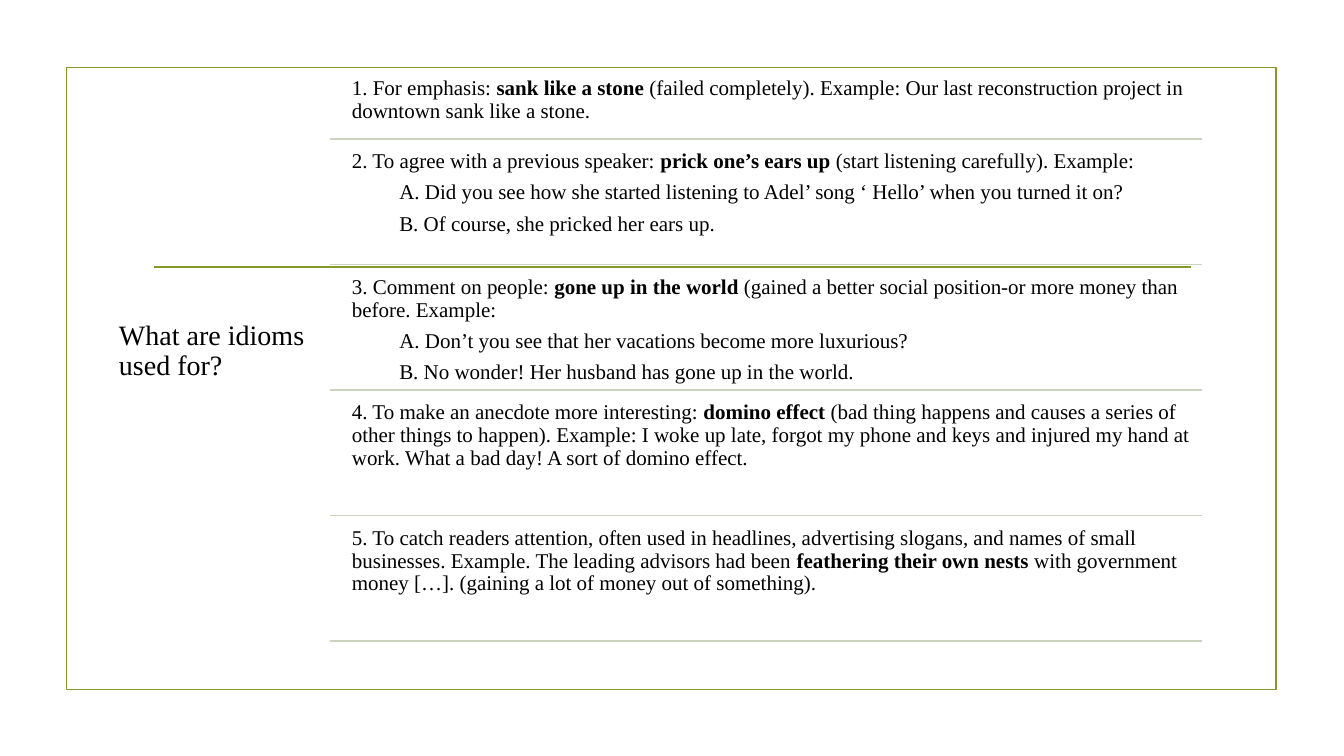
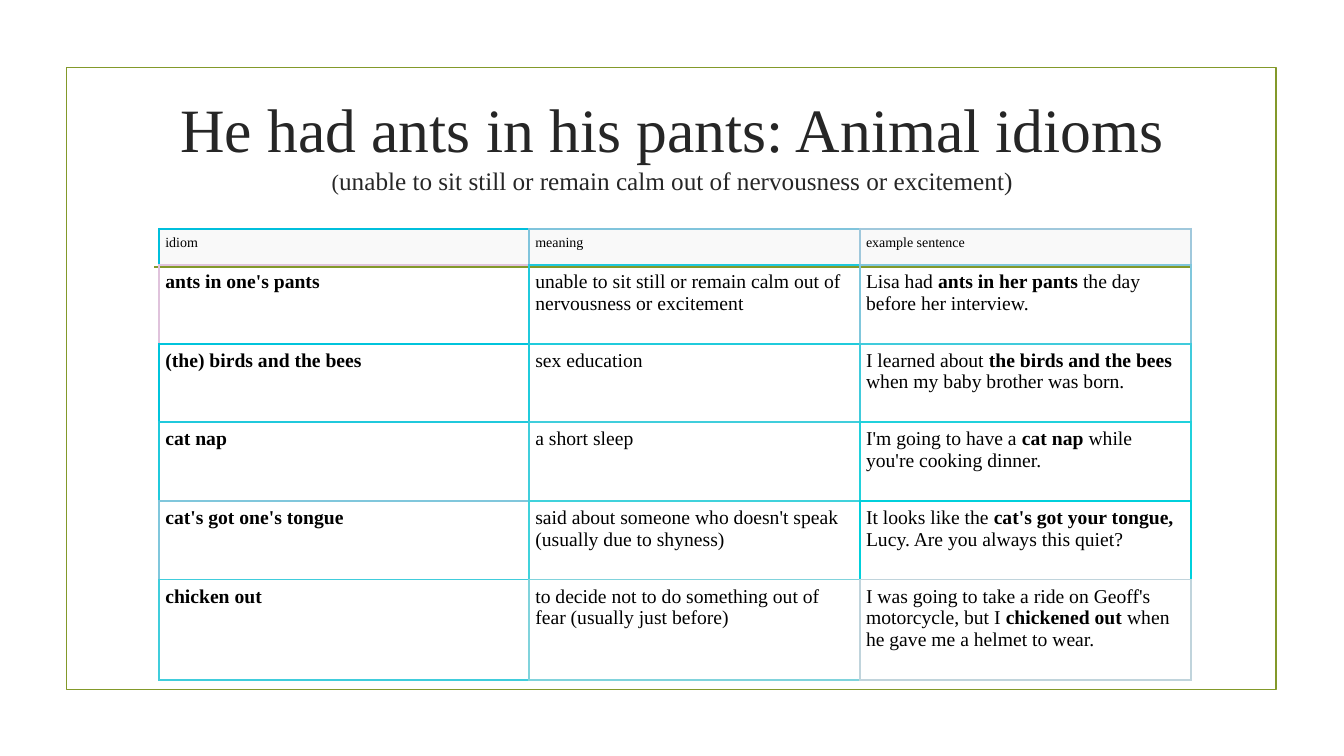
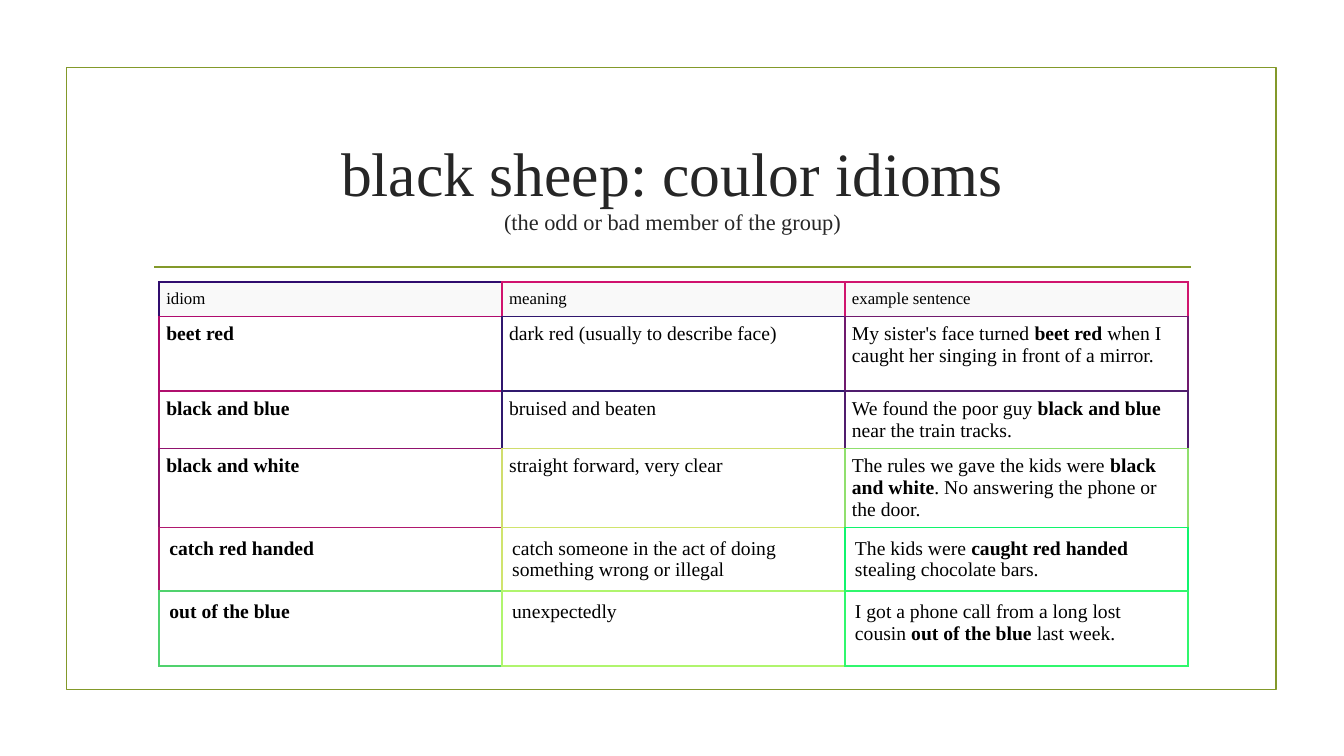
from lxml import etree
from pptx import Presentation
from pptx.dml import color
from pptx.enum import shapes, text
from pptx.oxml import ns
from pptx.util import Inches, Pt

GREEN, PALE, BLACK, DARK, HEAD = "83992A", "CDD4BE", "000000", "262626", "F9F9F9"
FONT = "Times New Roman"


def rgb(code):
    return color.RGBColor.from_string(code)


class Deck:
    """Holds the shared style and the current slide."""

    def __init__(self):
        self.prs = Presentation()
        self.prs.slide_width, self.prs.slide_height = Inches(13.33), Inches(7.5)

    def start(self, layout):
        self.slide = self.prs.slides.add_slide(self.prs.slide_layouts[layout])
        frame = self.slide.shapes.add_shape(
            shapes.MSO_SHAPE.RECTANGLE, Inches(0.66), Inches(0.67), Inches(12), Inches(6.17))
        frame.shadow.inherit = False
        frame.fill.background()
        frame.line.color.rgb = rgb(GREEN)
        frame.line.width = Pt(1.25)
        self.rule(1.53, 11.81, 2.65, GREEN)

    def rule(self, left, right, y, tint):
        line = self.slide.shapes.add_connector(
            shapes.MSO_CONNECTOR.STRAIGHT, Inches(left), Inches(y), Inches(right), Inches(y))
        line.line.color.rgb = rgb(tint)
        line.line.width = Pt(1.25)
        etree.SubElement(line._element.spPr, ns.qn("a:effectLst"))

    def run(self, para, words, size, tint=BLACK, bold=False):
        run = para.add_run()
        run.text = words
        font = run.font
        font.name, font.size, font.bold = FONT, Pt(size), bold
        font.color.rgb = rgb(tint)

    def say(self, para, words, size):
        """Adds the words, with those between stars in bold."""
        for i, part in enumerate(words.split("*")):
            if part:
                self.run(para, part, size, bold=i % 2 == 1)

    def inset(self, box, gap):
        box.margin_left = box.margin_right = Inches(gap)
        box.margin_top = box.margin_bottom = Inches(gap)

    def note(self, left, top, width, height, lines, size, gap):
        box = self.slide.shapes.add_textbox(
            Inches(left), Inches(top), Inches(width), Inches(height)).text_frame
        box.word_wrap = True
        self.inset(box, gap)
        for i, words in enumerate(lines):
            para = box.add_paragraph() if i else box.paragraphs[0]
            para.line_spacing = 0.9
            para.space_after = Pt(6)
            if i:
                para._p.get_or_add_pPr().set("marL", str(Inches(0.47)))
            self.say(para, words, size)

    def title(self, top, height, main, parts):
        shape = self.slide.shapes.title
        shape.left, shape.top = Inches(1.42), Inches(top)
        shape.width, shape.height = Inches(10.5), Inches(height)
        box = shape.text_frame
        box.word_wrap = True
        box.auto_size = text.MSO_AUTO_SIZE.NONE
        box.vertical_anchor = text.MSO_ANCHOR.MIDDLE
        box.margin_top, box.margin_bottom = Inches(0.1), 0
        para = box.paragraphs[0]
        para.alignment = text.PP_ALIGN.CENTER
        self.run(para, main, 44, DARK)
        para.add_line_break()
        for words, size in parts:
            self.run(para, words, size, DARK)

    def edge(self, cell, side, tint):
        line = etree.SubElement(cell._tc.get_or_add_tcPr(), ns.qn("a:ln" + side), w=str(Pt(1.5)))
        fill = etree.SubElement(line, ns.qn("a:solidFill"))
        etree.SubElement(fill, ns.qn("a:srgbClr"), val=tint)

    def table(self, top, cols, highs, rows, tints, gaps, small):
        """Draws a grid; each cell's tint marks its left and top edges."""
        grid = self.slide.shapes.add_table(
            len(rows), len(cols), Inches(1.58), Inches(top),
            Inches(sum(cols)), Inches(sum(highs))).table
        grid.first_row = grid.horz_banding = False
        for col, width in zip(grid.columns, cols):
            col.width = Inches(width)
        for r, row in enumerate(rows):
            grid.rows[r].height = Inches(highs[r])
            for c, words in enumerate(row):
                cell = grid.cell(r, c)
                self.inset(cell, gaps[r])
                own = tints[r][c]
                right = tints[r][min(c + 1, len(cols) - 1)]
                below = tints[min(r + 1, len(rows) - 1)][c]
                for side, tint in zip("LRTB", (own, right, own, below)):
                    self.edge(cell, side, tint)
                if r:
                    cell.fill.background()
                else:
                    cell.fill.solid()
                    cell.fill.fore_color.rgb = rgb(HEAD)
                self.say(cell.text_frame.paragraphs[0], words, 14 if r else small)


USES = [
    ["1. For emphasis: *sank like a stone *(failed completely). Example: Our last "
     "reconstruction project in downtown sank like a stone."],
    ["2. To agree with a previous speaker: *prick one’s ears up *(start listening carefully). Example:",
     "A. Did you see how she started listening to Adel’ song ‘ Hello’ when you turned it on?",
     "B. Of course, she pricked her ears up."],
    ["3. Comment on people: *gone up in the world *(gained a better social position-or more "
     "money than before. Example:",
     "A. Don’t you see that her vacations become more luxurious?",
     "B. No wonder! Her husband has gone up in the world."],
    ["4. To make an anecdote more interesting: *domino effect *(bad thing happens and causes a "
     "series of other things to happen). Example: I woke up late, forgot my phone and keys and "
     "injured my hand at work. What a bad day! A sort of domino effect."],
    ["5. To catch readers attention, often used in headlines, advertising slogans, and names of "
     "small businesses. Example. The leading advisors had been *feathering their own nests *with "
     "government money […]. (gaining a lot of money out of something)."],
]
TOP = ["idiom", "meaning", "example sentence"]
PETS = [
    TOP,
    ["*ants in one's pants*", "unable to sit still or remain calm out of nervousness or excitement",
     "Lisa had *ants in her pants* the day before her interview."],
    ["*(the) birds and the bees*", "sex education",
     "I learned about *the birds and the bees* when my baby brother was born."],
    ["*cat nap*", "a short sleep",
     "I'm going to have a *cat nap* while you're cooking dinner."],
    ["*cat's got one's tongue*", "said about someone who doesn't speak (usually due to shyness)",
     "It looks like the *cat's got your tongue,* Lucy. Are you always this quiet?"],
    ["*chicken out*", "to decide not to do something out of fear (usually just before)",
     "I was going to take a ride on Geoff's motorcycle, but I *chickened out* when he gave me "
     "a helmet to wear."],
]
PET_TINTS = [
    ["00BFDC", "80C4DC", "A0C8DC"],
    ["E0C3DC", "20C9DC", "80C7DC"],
    ["00C4DC", "20CBDC", "40CBDC"],
    ["20C9DC", "40CEDC", "20D1DC"],
    ["80C7DC", "40D2DC", "00D0DC"],
    ["40CDDC", "80D3DC", "C0D4DC"],
]
HUES = [
    TOP,
    ["*beet red*", "dark red (usually to describe face)",
     "My sister's face turned *beet red* when I caught her singing in front of a mirror."],
    ["*black and blue*", "bruised and beaten",
     "We found the poor guy *black and blue* near the train tracks."],
    ["*black and white*", "straight forward, very clear",
     "The rules we gave the kids were *black and white*. No answering the phone or the door."],
    ["*catch red handed*", "catch someone in the act of doing something wrong or illegal",
     "The kids were *caught red handed* stealing chocolate bars."],
    ["*out of the blue*", "unexpectedly",
     "I got a phone call from a long lost cousin *out of the blue* last week."],
]
HUE_TINTS = [
    ["300D6E", "D0126E", "D0156E"],
    ["B00B6E", "30176E", "701A6E"],
    ["B0106E", "30196E", "501D6E"],
    ["90136E", "D0DD6D", "90DF6D"],
    ["B0186E", "D0E46D", "10F46D"],
    ["50D26D", "B0F56D", "30F76D"],
]


def main():
    deck = Deck()

    deck.start(6)
    deck.rule(1.1, 11.92, 0.67, GREEN)
    deck.note(1.1, 3.11, 2.16, 3.31, ["What are idioms used for?"], 20, 0.08)
    step = (6.36 - 1.38) / (len(USES) - 1)
    for i, lines in enumerate(USES):
        end = 1.38 + step * i
        high = 1.19 if i else 0.67
        deck.note(3.43, end - high, 8.49, high, lines, 15, 0.06)
        deck.rule(3.27, 11.92, end, PALE)

    deck.start(5)
    deck.title(0.76, 1.22, "He had ants in his pants: Animal idioms", [
        ("(", 16), ("unable to sit still or remain calm out of nervousness or excitement)", 18)])
    deck.table(2.27, [3.67, 3.28, 3.28], [0.36] + [0.78] * 4 + [1],
               PETS, PET_TINTS, [0.06] * 6, 10)

    deck.start(5)
    deck.title(1.07, 1.43, "black sheep: coulor idioms",
               [("(the odd or bad member of the group)", 16)])
    deck.table(2.8, [3.4] * 3, [0.34] + [0.74, 0.54] * 2 + [0.74],
               HUES, HUE_TINTS, [0.07] * 4 + [0.1] * 2, 12)

    deck.prs.save("out.pptx")


if __name__ == "__main__":
    main()
